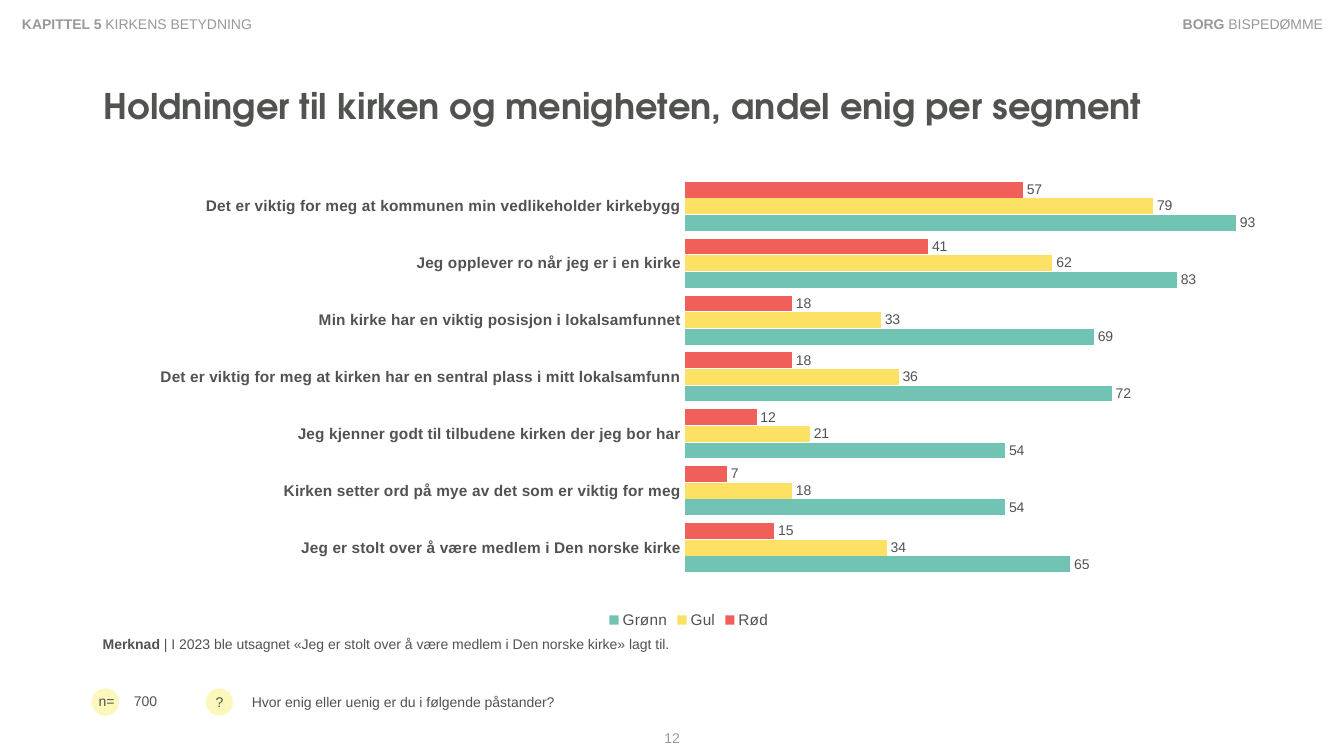
from dataclasses import dataclass

from lxml import etree
from pptx import Presentation
from pptx.chart.data import CategoryChartData
from pptx.dml.color import RGBColor
from pptx.enum.chart import XL_CHART_TYPE, XL_LABEL_POSITION, XL_LEGEND_POSITION, XL_TICK_MARK
from pptx.enum.shapes import MSO_SHAPE
from pptx.enum.text import MSO_ANCHOR, PP_ALIGN
from pptx.oxml.ns import qn
from pptx.util import Inches, Pt

TOP, MIDDLE, BOTTOM = MSO_ANCHOR.TOP, MSO_ANCHOR.MIDDLE, MSO_ANCHOR.BOTTOM
LEFT, CENTER, RIGHT = PP_ALIGN.LEFT, PP_ALIGN.CENTER, PP_ALIGN.RIGHT
NO_TICK = XL_TICK_MARK.NONE


@dataclass(frozen=True)
class Theme:
    text: str = "515350"
    header: str = "969995"
    number: str = "989998"
    badge: str = "FCF7BA"
    red: str = "F15F5B"
    yellow: str = "FCE164"
    green: str = "71C3B3"
    body_font: str = "Arial"
    title_font: str = "TeX Gyre Adventor"
    body_size: float = 10
    axis_size: float = 11
    title_size: float = 25.2


T = Theme()


def style_font(font, color=T.text, size=T.body_size, name=T.body_font, bold=False):
    for key, value in {"name": name, "size": Pt(size), "bold": bold}.items():
        setattr(font, key, value)
    font.color.rgb = RGBColor.from_string(color)


def add_text(box, runs, align=LEFT, anchor=TOP, **fmt):
    """Write (text, bold) runs as one paragraph in a new text box."""
    tf = s.shapes.add_textbox(*map(Inches, box)).text_frame
    tf.word_wrap, tf.vertical_anchor = True, anchor
    p = tf.paragraphs[0]
    p.alignment = align
    for text, bold in runs:
        r = p.add_run()
        r.text = text
        style_font(r.font, bold=bold, **fmt)
    return p


prs = Presentation()
prs.slide_width, prs.slide_height = Inches(13.33), Inches(7.5)
s = prs.slides.add_slide(prs.slide_layouts[6])

# Round badges behind "n=" and "?"
for left in (2.04, 0.91):
    badge = s.shapes.add_shape(MSO_SHAPE.OVAL, Inches(left), Inches(6.83), Inches(0.27), Inches(0.27))
    badge.shadow.inherit = False
    badge.fill.solid()
    badge.fill.fore_color.rgb = RGBColor.from_string(T.badge)
    badge.line.fill.background()

# Header and title
add_text((0.12, 0.1, 5.64, 0.27), [("KAPITTEL 5 ", True), ("KIRKENS BETYDNING", False)], color=T.header)
add_text((11.12, 0.1, 2.1, 0.27), [("BORG ", True), ("BISPEDØMME", False)], RIGHT, color=T.header)
title = add_text((0.93, 0.39, 11.52, 0.92),
                 [("Holdninger til kirken og menigheten, andel enig per segment", True)],
                 anchor=BOTTOM, size=T.title_size, name=T.title_font)
title.line_spacing = 0.9

# Chart data
statements = [
    "Det er viktig for meg at kommunen min vedlikeholder kirkebygg",
    "Jeg opplever ro når jeg er i en kirke",
    "Min kirke har en viktig posisjon i lokalsamfunnet",
    "Det er viktig for meg at kirken har en sentral plass i mitt lokalsamfunn",
    "Jeg kjenner godt til tilbudene kirken der jeg bor har",
    "Kirken setter ord på mye av det som er viktig for meg",
    "Jeg er stolt over å være medlem i Den norske kirke",
]
segments = [
    ("Rød", T.red, (57, 41, 18, 18, 12, 7, 15)),
    ("Gul", T.yellow, (79, 62, 33, 36, 21, 18, 34)),
    ("Grønn", T.green, (93, 83, 69, 72, 54, 54, 65)),
]
data = CategoryChartData(number_format="0")
data.categories = statements
for name, _, values in segments:
    data.add_series(name, values)

# Bar chart
frame = s.shapes.add_chart(XL_CHART_TYPE.BAR_CLUSTERED, Inches(1.23), Inches(1.7),
                           Inches(11.22), Inches(4.58), data)
chart = frame.chart
chart.has_title = False
style_font(chart.font)
plot = chart.plots[0]
plot.gap_width, plot.overlap, plot.vary_by_categories = 50, -5, False
for series, (_, color, _) in zip(plot.series, segments):
    series.format.fill.solid()
    series.format.fill.fore_color.rgb = RGBColor.from_string(color)
    labels = series.data_labels
    for key, value in {"show_value": True, "number_format": "0", "number_format_is_linked": False,
                       "position": XL_LABEL_POSITION.OUTSIDE_END}.items():
        setattr(labels, key, value)
    style_font(labels.font)

# Axes and legend
axis_formats = [
    (chart.category_axis, {"reverse_order": True, "major_tick_mark": NO_TICK, "minor_tick_mark": NO_TICK}),
    (chart.value_axis, {"visible": False, "minimum_scale": 0, "maximum_scale": 93.5, "major_unit": 0.2}),
]
for axis, fmt in axis_formats:
    axis.has_major_gridlines = False
    for key, value in fmt.items():
        setattr(axis, key, value)
chart.category_axis.format.line.fill.background()
style_font(chart.category_axis.tick_labels.font, size=T.axis_size, bold=True)
chart.has_legend = True
chart.legend.position = XL_LEGEND_POSITION.BOTTOM
chart.legend.include_in_layout = False
style_font(chart.legend.font, size=T.axis_size)

# Fixed inner plot area
plot_area = chart.element.find(".//" + qn("c:plotArea"))
for old in plot_area.findall(qn("c:layout")):
    plot_area.remove(old)
layout = etree.Element(qn("c:layout"))
manual = etree.SubElement(layout, qn("c:manualLayout"))
for tag, value in [("layoutTarget", "inner"), ("xMode", "edge"), ("yMode", "edge"),
                   ("x", 0.497), ("y", 0.014), ("w", 0.49), ("h", 0.863)]:
    etree.SubElement(manual, qn("c:" + tag)).set("val", str(value))
plot_area.insert(0, layout)

# Note, sample size and question
add_text((0.92, 6.26, 11.5, 0.27),
         [("Merknad", True),
          (" | I 2023 ble utsagnet «Jeg er stolt over å være medlem i Den norske kirke» lagt til.", False)])
add_text((0.88, 6.82, 0.45, 0.27), [("n=", False)])
add_text((1.23, 6.82, 0.74, 0.27), [("700", False)], anchor=MIDDLE)
add_text((2.04, 6.83, 0.25, 0.27), [("?", False)])
add_text((2.4, 6.67, 10.05, 0.58), [("Hvor enig eller uenig er du i følgende påstander?", False)], anchor=MIDDLE)

# Page number
add_text((6.29, 7.15, 0.75, 0.35), [("12", False)], CENTER, MIDDLE, color=T.number)

prs.save("out.pptx")
